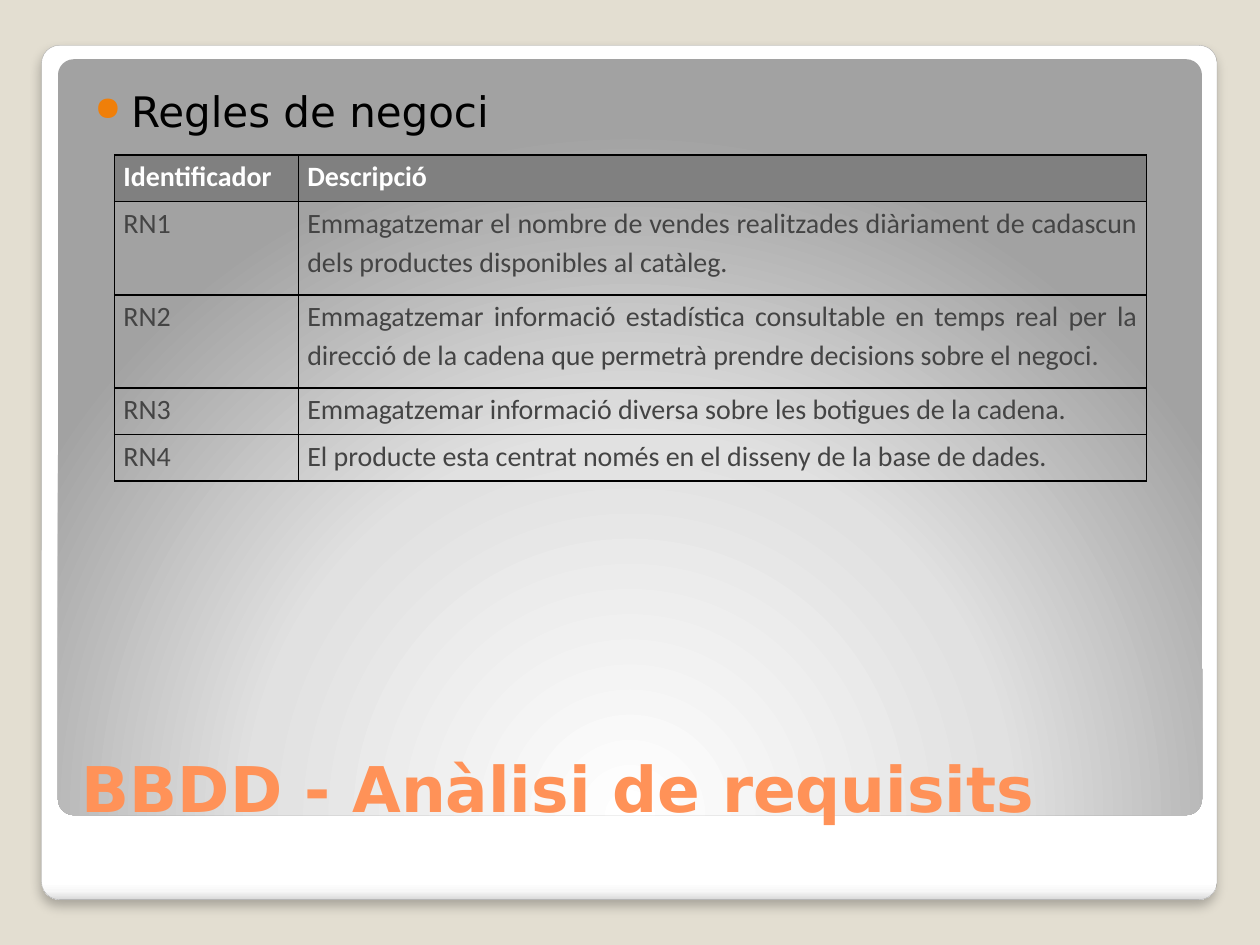
from lxml import etree
from pptx import Presentation
from pptx.dml.color import RGBColor
from pptx.enum.shapes import MSO_SHAPE
from pptx.enum.text import MSO_ANCHOR, PP_ALIGN
from pptx.oxml import parse_xml
from pptx.oxml.ns import nsdecls, qn
from pptx.util import Inches, Pt

ROUNDED = MSO_SHAPE.ROUNDED_RECTANGLE
BOTTOM, TOP = MSO_ANCHOR.BOTTOM, MSO_ANCHOR.TOP
LEFT, JUSTIFY = PP_ALIGN.LEFT, PP_ALIGN.JUSTIFY
WIDTH, HEIGHT = 10, 7.5
ROW = 0.37

HEADER = {"size": Pt(16), "name": "Calibri", "bold": True, "color": "FFFFFF"}
BODY = {**HEADER, "bold": False, "color": "444444"}
TITLE = {"size": Pt(36), "name": "DejaVu Sans", "bold": True, "color": "FF9258"}
BULLET = {"size": Pt(24), "name": "DejaVu Sans", "bold": False, "color": "000000"}

RULES = [
    ("Identificador", "Descripció", 1),
    ("RN1", "Emmagatzemar el nombre de vendes realitzades diàriament de cadascun "
            "dels productes disponibles al catàleg.", 2),
    ("RN2", "Emmagatzemar informació estadística consultable en temps real per la "
            "direcció de la cadena que permetrà prendre decisions sobre el negoci.", 2),
    ("RN3", "Emmagatzemar informació diversa sobre les botigues de la cadena.", 1),
    ("RN4", "El producte esta centrat només en el disseny de la base de dades.", 1),
]


def rgb(value):
    return RGBColor.from_string(value)


def inches(box):
    return [Inches(v) for v in box]


def add_text(p, text, style):
    r = p.add_run()
    r.text = text
    for key, value in style.items():
        if key == "color":
            r.font.color.rgb = rgb(value)
        else:
            setattr(r.font, key, value)


def set_frame(tf, anchor, left, top, right, bottom):
    tf.word_wrap = True
    tf.vertical_anchor = anchor
    margins = {"left": left, "top": top, "right": right, "bottom": bottom}
    for side, value in margins.items():
        setattr(tf, f"margin_{side}", Inches(value))


def add_panel(slide, box, stops, direction):
    """Add a rounded panel; direction is the XML that steers its gradient."""
    s = slide.shapes.add_shape(ROUNDED, *inches(box))
    s.adjustments[0] = 0.021
    s.shadow.inherit = False
    s.line.fill.background()
    s.fill.gradient()
    old = s.element.spPr.find(qn("a:gradFill"))
    marks = "".join(f'<a:gs pos="{pos * 1000}"><a:srgbClr val="{color}"/></a:gs>'
                    for pos, color in stops)
    s.element.spPr.replace(old, parse_xml(
        f'<a:gradFill {nsdecls("a")} rotWithShape="1">'
        f"<a:gsLst>{marks}</a:gsLst>{direction}</a:gradFill>"))
    return s


def add_background(slide, box):
    """Fill the slide and lay the white card and the grey panel in the box."""
    slide.background.fill.solid()
    slide.background.fill.fore_color.rgb = rgb("E3DED1")
    x, y, w, h = box
    card = add_panel(slide, box,
                     [(0, "FFFFFF"), (98, "FFFFFF"), (99, "F7F7F7"), (100, "DADADA")],
                     '<a:lin ang="5400000" scaled="0"/>')
    card.line.color.rgb = rgb("A4A4A4")
    card.line.width = Pt(0.16)
    card.element.spPr.find(qn("a:effectLst")).append(parse_xml(
        f'<a:outerShdw {nsdecls("a")} blurRad="{Pt(6)}" dist="{Pt(4)}" dir="5400000" '
        'algn="tl" rotWithShape="0"><a:srgbClr val="000000">'
        '<a:alpha val="25000"/></a:srgbClr></a:outerShdw>'))
    add_panel(slide, (x + 0.13, y + 0.11, w - 0.25, h - 0.78),
              [(0, "FFFFFF"), (55, "E1E1E1"), (100, "A2A2A2")],
              '<a:path path="circle"><a:fillToRect l="50000" t="175000" '
              'r="50000" b="-75000"/></a:path>')


def place_title(slide, box, text):
    s = slide.shapes.title
    s.left, s.top, s.width, s.height = inches(box)
    set_frame(s.text_frame, BOTTOM, 0.1, 0.05, 0.1, 0.05)
    p = s.text_frame.paragraphs[0]
    p.alignment = LEFT
    add_text(p, text, TITLE)
    # Raise the title above the background panels.
    slide.shapes.element.append(s.element)


def add_bullet(slide, box, text):
    tf = slide.shapes.add_textbox(*inches(box)).text_frame
    set_frame(tf, TOP, 0.2, 0.1, 0.1, 0.05)
    p = tf.paragraphs[0]
    p.space_before = Pt(2.5)
    add_text(p, text, BULLET)
    pPr = p._p.get_or_add_pPr()
    pPr.set("marL", str(Inches(0.29)))
    pPr.set("indent", str(Inches(-0.29)))
    color = etree.SubElement(pPr, qn("a:buClr"))
    etree.SubElement(color, qn("a:srgbClr"), val="F07F09")
    etree.SubElement(pPr, qn("a:buSzPct"), val="80000")
    etree.SubElement(pPr, qn("a:buChar"), char="●")


def set_borders(cell):
    tcPr = cell._tc.get_or_add_tcPr()
    for i, side in enumerate("LRTB"):
        tcPr.insert(i, parse_xml(
            f'<a:ln{side} {nsdecls("a")} w="{Pt(1)}"><a:solidFill>'
            f'<a:srgbClr val="000000"/></a:solidFill></a:ln{side}>'))


def add_rules_table(slide, box):
    x, y, w, h = box
    table = slide.shapes.add_table(len(RULES), 2, *inches(box)).table
    table.first_row = table.horz_banding = False
    table.columns[0].width = Inches(1.46)
    table.columns[1].width = Inches(w - 1.46)
    for i, (*texts, lines) in enumerate(RULES):
        table.rows[i].height = Inches(ROW * lines)
        for j, text in enumerate(texts):
            cell = table.cell(i, j)
            set_frame(cell, TOP, 0.07, 0, 0.07, 0)
            p = cell.text_frame.paragraphs[0]
            p.line_spacing = 1.15
            p.alignment = JUSTIFY if i else LEFT
            add_text(p, text, BODY if i else HEADER)
            if i:
                cell.fill.background()
            else:
                cell.fill.solid()
                cell.fill.fore_color.rgb = rgb("808080")
            set_borders(cell)


def main():
    prs = Presentation()
    prs.slide_width, prs.slide_height = Inches(WIDTH), Inches(HEIGHT)
    slide = prs.slides.add_slide(prs.slide_layouts.get_by_name("Title Only"))
    left, width = 0.055 * WIDTH, 0.895 * WIDTH
    add_background(slide, (0.33, 0.36, 9.33, 6.78))
    place_title(slide, (left, 5.45, width, 1.15), "BBDD - Anàlisi de requisits")
    add_bullet(slide, (left, 0.58, width, 4.58), "Regles de negoci")
    add_rules_table(slide, (0.91, 1.23, 8.19, ROW * sum(row[-1] for row in RULES)))
    prs.save("out.pptx")


if __name__ == "__main__":
    main()
